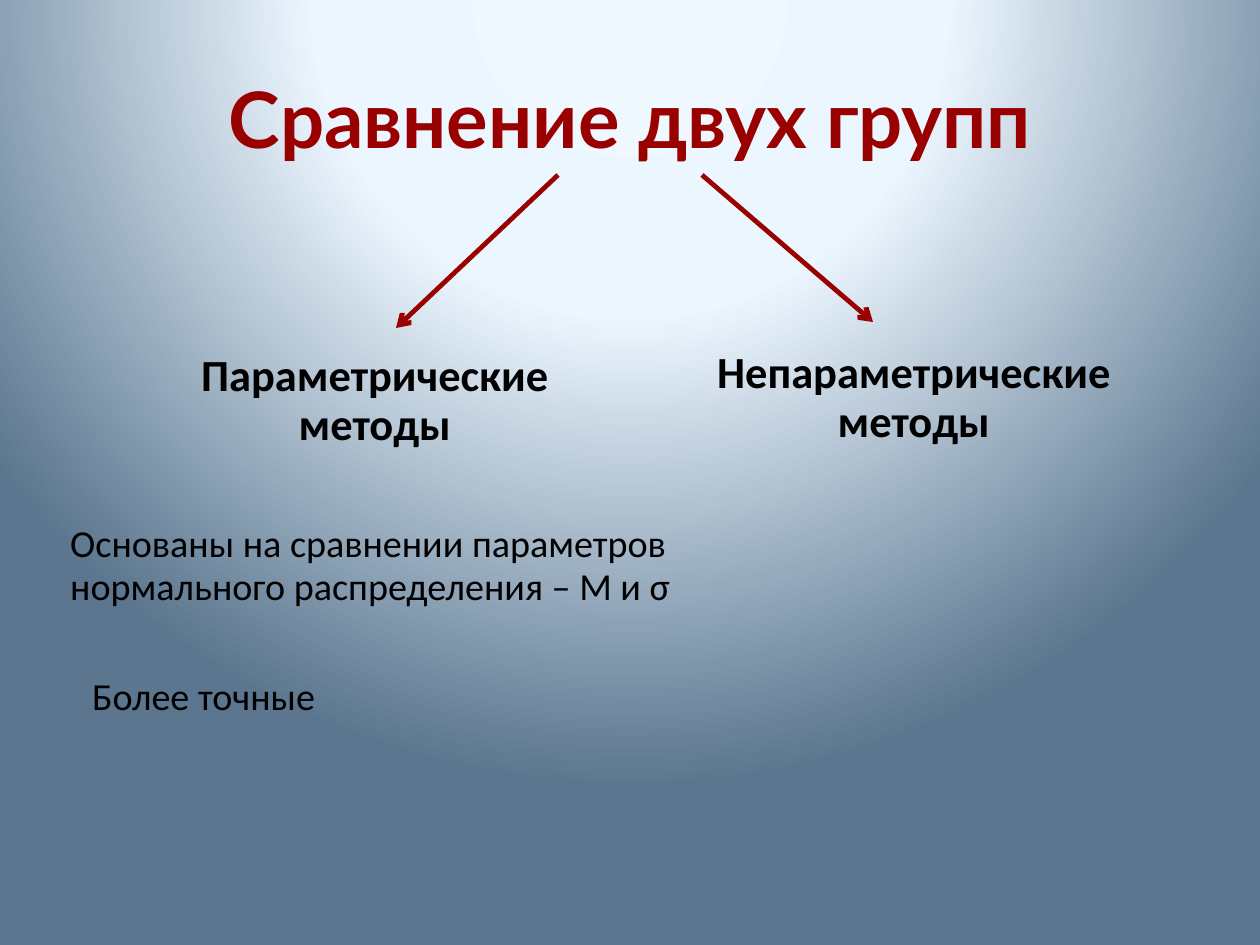
from typing import NamedTuple

from lxml import etree
from pptx import Presentation
from pptx.dml.color import RGBColor
from pptx.enum.shapes import MSO_CONNECTOR
from pptx.enum.text import MSO_ANCHOR, MSO_AUTO_SIZE, PP_ALIGN
from pptx.oxml import parse_xml
from pptx.oxml.ns import nsdecls, qn
from pptx.slide import Slide
from pptx.util import Emu, Pt

STRAIGHT = MSO_CONNECTOR.STRAIGHT
MIDDLE = MSO_ANCHOR.MIDDLE
FIT_SHAPE = MSO_AUTO_SIZE.SHAPE_TO_FIT_TEXT
LEFT, CENTER = PP_ALIGN.LEFT, PP_ALIGN.CENTER

EMU_PER_PX = 8000
COLORS = {
    "accent": "990000",
    "text": "000000",
    "glow": "F0F8FF",
    "sky": "ECF6FF",
    "slate": "5B768E",
}


class Label(NamedTuple):
    x: int
    y: int
    w: int
    h: int
    lines: tuple[str, ...]
    size: int
    bold: bool = False
    last_align: PP_ALIGN = LEFT


class Arrow(NamedTuple):
    x1: int
    y1: int
    x2: int
    y2: int


TITLE = Label(63, 38, 1134, 158, ("Сравнение двух групп",), 49, True, CENTER)
LABELS = (
    Label(190, 346, 374, 112, ("Параметрические", "методы"), 28, True, CENTER),
    Label(706, 343, 421, 112, ("Непараметрические", "методы"), 28, True, CENTER),
    Label(59, 518, 634, 97, ("Основаны на сравнении параметров",
                             "нормального распределения – М и σ"), 24),
    Label(81, 671, 248, 55, ("Более точные",), 24),
)
ARROWS = (Arrow(558, 175, 396, 328), Arrow(702, 175, 873, 322))
GRADIENT = ((0, "glow"), (40, "sky"), (100, "slate"))


def px(n: int) -> Emu:
    return Emu(n * EMU_PER_PX)


def rgb(name: str) -> RGBColor:
    return RGBColor.from_string(COLORS[name])


def set_background(s: Slide) -> None:
    """Fill the background with a circular gradient centred above the slide."""
    s.background.fill.solid()
    solid = s.element.find(".//" + qn("p:bgPr")).find(qn("a:solidFill"))
    stops = "".join(
        f'<a:gs pos="{pos * 1000}"><a:srgbClr val="{COLORS[name]}"/></a:gs>'
        for pos, name in GRADIENT
    )
    solid.getparent().replace(solid, parse_xml(
        f'<a:gradFill {nsdecls("a")} rotWithShape="1"><a:gsLst>{stops}</a:gsLst>'
        '<a:path path="circle">'
        '<a:fillToRect l="50000" t="-80000" r="50000" b="180000"/>'
        '</a:path></a:gradFill>'
    ))


def add_label(s: Slide, label: Label, font: str, color: str,
              spacing: float) -> None:
    sp = s.shapes.add_textbox(px(label.x), px(label.y), px(label.w), px(label.h))
    tf = sp.text_frame
    tf.text = "\n".join(label.lines)
    tf.word_wrap = False
    for p in tf.paragraphs:
        p.alignment = LEFT
        p.line_spacing = spacing
        for r in p.runs:
            r.font.name = font
            r.font.size = Pt(label.size)
            r.font.bold = label.bold
            r.font.color.rgb = rgb(color)
    tf.paragraphs[-1].alignment = label.last_align
    if label is TITLE:
        tf.word_wrap = True
        tf.vertical_anchor = MIDDLE
    else:
        tf.auto_size = FIT_SHAPE


def add_arrow(s: Slide, arrow: Arrow) -> None:
    line = s.shapes.add_connector(STRAIGHT, *(px(n) for n in arrow))
    line.line.color.rgb = rgb("accent")
    line.line.width = Pt(3)
    etree.SubElement(line.line._get_or_add_ln(), qn("a:tailEnd"), type="arrow")
    etree.SubElement(line.element.spPr, qn("a:effectLst"))


def main() -> None:
    prs = Presentation()
    prs.slide_width, prs.slide_height = px(1260), px(945)
    s = prs.slides.add_slide(prs.slide_layouts[6])
    set_background(s)
    add_label(s, TITLE, "Lato", "accent", 1.0)
    for arrow in ARROWS:
        add_arrow(s, arrow)
    for label in LABELS:
        add_label(s, label, "Calibri", "text", 0.93)
    prs.save("out.pptx")


if __name__ == "__main__":
    main()
